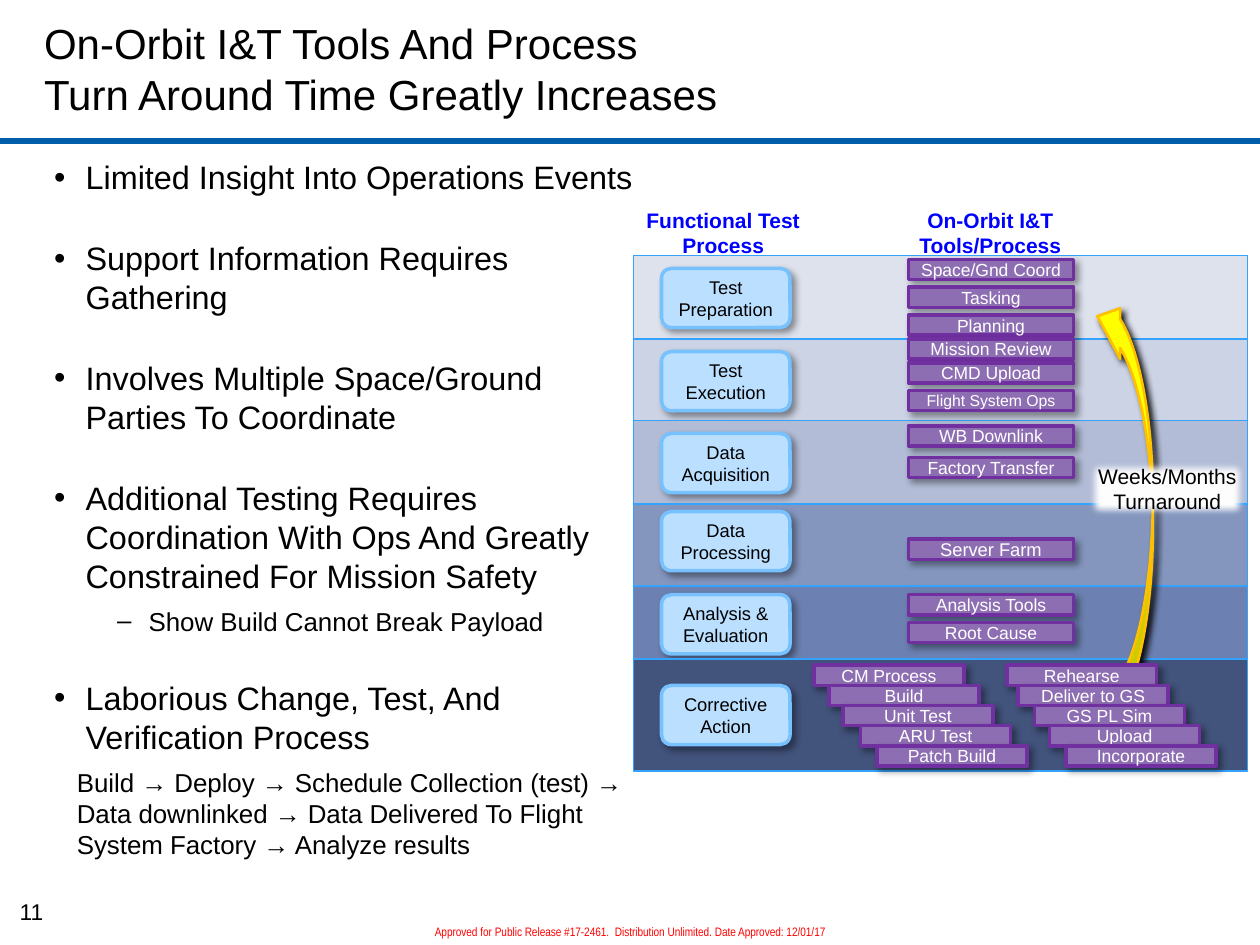
import pptx
import pptx.util
from pptx.dml.color import RGBColor
from pptx.enum.shapes import MSO_CONNECTOR, MSO_SHAPE
from pptx.enum.text import MSO_ANCHOR, MSO_AUTO_SIZE, PP_ALIGN
from pptx.oxml import parse_xml
from pptx.oxml.ns import nsdecls, qn
from pptx.util import Inches

BLACK = RGBColor(0x00, 0x00, 0x00)
WHITE = RGBColor(0xFF, 0xFF, 0xFF)
RED = RGBColor(0xFF, 0x00, 0x00)
HEADING_BLUE = RGBColor(0x00, 0x00, 0xFF)
RULE_BLUE = RGBColor(0x00, 0x5D, 0xAA)
BAND_LINE = RGBColor(0x33, 0xA3, 0xFF)
STAGE_FILL = RGBColor(0xBB, 0xE0, 0xFF)
STAGE_LINE = RGBColor(0x77, 0xC1, 0xFF)
TOOL_FILL = RGBColor(0x8E, 0x6E, 0xB2)
TOOL_LINE = RGBColor(0x70, 0x30, 0xA0)
ARROW_FILL = RGBColor(0xFF, 0xFF, 0x00)
ARROW_LINE = RGBColor(0xFF, 0xC0, 0x00)

# Content
TITLE = """On-Orbit I&T Tools And Process
Turn Around Time Greatly Increases"""
FOOTER = "Approved for Public Release #17-2461.  Distribution Unlimited. Date Approved: 12/01/17"

# (kind, text)
POINTS = [
    ("main", "Limited Insight Into Operations Events"),
    ("main", "Support Information Requires Gathering"),
    ("main", "Involves Multiple Space/Ground Parties To Coordinate"),
    ("main", "Additional Testing Requires Coordination With Ops And Greatly "
             "Constrained For Mission Safety"),
    ("sub", "Show Build Cannot Break Payload"),
    ("main", "Laborious Change, Test, And Verification Process"),
    ("flow", "Build → Deploy → Schedule Collection (test) → Data downlinked → "
             "Data Delivered To Flight System Factory → Analyze results"),
]
# kind: level, left margin, first-line indent, bullet, size, space before
POINT_STYLES = {
    "main": (0, 0.25, -0.25, "•", 18.5, 24),
    "sub": (1, 0.75, -0.25, "–", 14.8, 6),
    "flow": (1, 0.18, 0, None, 14.8, 6),
}

# (band top, band colour, stage top, stage label)
STAGES = [
    (2.03, "DDE2ED", 2.13, ["Test", "Preparation"]),
    (2.69, "CCD3E4", 2.79, ["Test", "Execution"]),
    (3.34, "B2BCD6", 3.44, ["Data Acquisition"]),
    (4.00, "8496BE", 4.06, ["Data Processing"]),
    (4.65, "6C81B1", 4.72, ["Analysis & Evaluation"]),
    (5.23, "42537C", 5.44, ["Corrective Action"]),
]
BANDS_BOTTOM = 6.12

# (top, label, text size)
TOOLS = [
    (2.06, "Space/Gnd Coord", 10), (2.28, "Tasking", 10), (2.50, "Planning", 10),
    (2.69, "Mission Review", 10), (2.88, "CMD Upload", 10), (3.10, "Flight System Ops", 9),
    (3.38, "WB Downlink", 10), (3.63, "Factory Transfer", 10), (4.28, "Server Farm", 10.5),
    (4.72, "Analysis Tools", 10), (4.94, "Root Cause", 10),
]
# Staggered corrective steps: (left, label)
REPAIR_STEPS = [(6.46, "CM Process"), (6.58, "Build"), (6.69, "Unit Test"),
                (6.83, "ARU Test"), (6.96, "Patch Build")]
RELEASE_STEPS = [(7.99, "Rehearse"), (8.08, "Deliver to GS"), (8.21, "GS PL Sim"),
                 (8.33, "Upload"), (8.46, "Incorporate")]
STEPS_TOP, STEP_HEIGHT = 5.28, 0.16

# (left, width, lines)
HEADINGS = [(5.00, 1.48, ["Functional Test", "Process"]),
            (7.19, 1.34, ["On-Orbit I&T", "Tools/Process"])]


def write(frame, paragraphs, size=12, color=BLACK, bold=False, font="Arial",
          align=PP_ALIGN.CENTER, anchor=MSO_ANCHOR.TOP, wrap=True, side_inset=0.1):
    """Fill a text frame with paragraphs in one format."""
    frame.word_wrap = wrap
    frame.auto_size = MSO_AUTO_SIZE.NONE
    frame.vertical_anchor = anchor
    frame.margin_left = frame.margin_right = Inches(side_inset)
    frame.margin_top = frame.margin_bottom = Inches(0.05)
    for index, text in enumerate(paragraphs):
        paragraph = frame.paragraphs[0] if index == 0 else frame.add_paragraph()
        paragraph.text = text
        paragraph.alignment = align
        for run in paragraph.runs:
            run.font.size = pptx.util.Pt(size)
            run.font.name = font
            run.font.bold = bold
            run.font.color.rgb = color


def set_effect(shape, effect):
    shape.shadow.inherit = False
    shape._element.spPr.find(qn("a:effectLst")).append(parse_xml(effect))


def add_shadow(shape, opacity=40):
    set_effect(shape, f'<a:outerShdw {nsdecls("a")} blurRad="50800" dist="38100" dir="2700000">'
                      f'<a:srgbClr val="000000"><a:alpha val="{opacity * 1000}"/></a:srgbClr>'
                      '</a:outerShdw>')


def add_box(slide, kind, box, fill, line=None, weight=2):
    shape = slide.shapes.add_shape(kind, *map(Inches, box))
    shape.shadow.inherit = False
    shape.fill.solid()
    shape.fill.fore_color.rgb = fill
    if line is None:
        shape.line.fill.background()
    else:
        shape.line.color.rgb = line
        shape.line.width = pptx.util.Pt(weight)
    return shape


def add_tool(slide, left, top, width, label, size=10):
    tool = add_box(slide, MSO_SHAPE.RECTANGLE, (left, top, width, STEP_HEIGHT),
                   TOOL_FILL, TOOL_LINE)
    add_shadow(tool)
    write(tool.text_frame, [label], size=size, color=WHITE,
          anchor=MSO_ANCHOR.MIDDLE, side_inset=0)


def add_note(slide, box, paragraphs, **text_format):
    note = slide.shapes.add_textbox(*map(Inches, box))
    write(note.text_frame, paragraphs, **text_format)


def place(placeholder, box):
    placeholder.left, placeholder.top, placeholder.width, placeholder.height = map(Inches, box)


def add_points(body):
    place(body, (0.33, 1.2, 4.87, 5.7))
    write(body.text_frame, [text for _, text in POINTS], align=PP_ALIGN.LEFT)
    for index, (paragraph, (kind, _)) in enumerate(zip(body.text_frame.paragraphs, POINTS)):
        level, margin, indent, bullet, size, before = POINT_STYLES[kind]
        paragraph.level = level
        paragraph.space_before = pptx.util.Pt(before if index else 0)
        properties = paragraph._p.get_or_add_pPr()
        properties.set("marL", str(Inches(margin)))
        properties.set("indent", str(Inches(indent)))
        mark = f'buChar {nsdecls("a")} char="{bullet}"' if bullet else f'buNone {nsdecls("a")}'
        properties.append(parse_xml(f"<a:{mark}/>"))
        paragraph.runs[0].font.size = pptx.util.Pt(size)


def add_process(slide):
    # Bands and stages
    bottoms = [stage[0] for stage in STAGES[1:]] + [BANDS_BOTTOM]
    for (top, color, stage_top, label), bottom in zip(STAGES, bottoms):
        add_box(slide, MSO_SHAPE.RECTANGLE, (5.03, top, 4.87, bottom - top),
                RGBColor.from_string(color), BAND_LINE, 0.75)
        stage = add_box(slide, MSO_SHAPE.ROUNDED_RECTANGLE, (5.25, stage_top, 1.02, 0.47),
                        STAGE_FILL, STAGE_LINE)
        add_shadow(stage)
        write(stage.text_frame, label, size=10.5, anchor=MSO_ANCHOR.MIDDLE)

    # Column headings and tools
    for left, width, lines in HEADINGS:
        add_note(slide, (left, 1.6, width, 0.5), lines, color=HEADING_BLUE, bold=True, wrap=False)
    for top, label, size in TOOLS:
        add_tool(slide, 7.21, top, 1.31, label, size)

    # Turnaround arrow and label
    arrow = add_box(slide, MSO_SHAPE.CURVED_LEFT_ARROW, (8.71, 2.31, 0.44, 3.44),
                    ARROW_FILL, ARROW_LINE, 1.5)
    for index, value in enumerate((0.52, 0.91, 0.41)):
        arrow.adjustments[index] = value
    arrow._element.spPr.find(qn("a:xfrm")).set("flipV", "1")
    add_shadow(arrow, 94)
    turnaround = add_box(slide, MSO_SHAPE.RECTANGLE, (8.61, 3.63, 1.31, 0.5), WHITE)
    set_effect(turnaround, f'<a:softEdge {nsdecls("a")} rad="63500"/>')
    write(turnaround.text_frame, ["Weeks/Months", "Turnaround"], wrap=False)

    # Corrective action steps
    for steps in (REPAIR_STEPS, RELEASE_STEPS):
        for index, (left, label) in enumerate(steps):
            add_tool(slide, left, STEPS_TOP + index * STEP_HEIGHT, 1.19, label)


def main():
    deck = pptx.Presentation()
    deck.slide_width, deck.slide_height = Inches(10), Inches(7.5)
    slide = deck.slides.add_slide(deck.slide_layouts[1])

    # Title and rule
    title = slide.shapes.title
    place(title, (0.25, 0.08, 7.33, 0.92))
    write(title.text_frame, [TITLE], size=24, align=PP_ALIGN.LEFT, anchor=MSO_ANCHOR.MIDDLE)
    rule = slide.shapes.add_connector(MSO_CONNECTOR.STRAIGHT, 0, Inches(1.12),
                                      Inches(10), Inches(1.12))
    rule.line.color.rgb = RULE_BLUE
    rule.line.width = pptx.util.Pt(3.75)
    rule._element.spPr.append(parse_xml(f'<a:effectLst {nsdecls("a")}/>'))

    add_process(slide)
    add_points(slide.placeholders[1])

    # Page number and release notice
    add_note(slide, (0.03, 7.08, 0.44, 0.33), ["11"], size=13, wrap=False)
    add_note(slide, (2.78, 7.28, 4.44, 0.22), [FOOTER], size=7, color=RED,
             font="Arial Narrow", anchor=MSO_ANCHOR.BOTTOM)
    deck.save("out.pptx")


if __name__ == "__main__":
    main()
